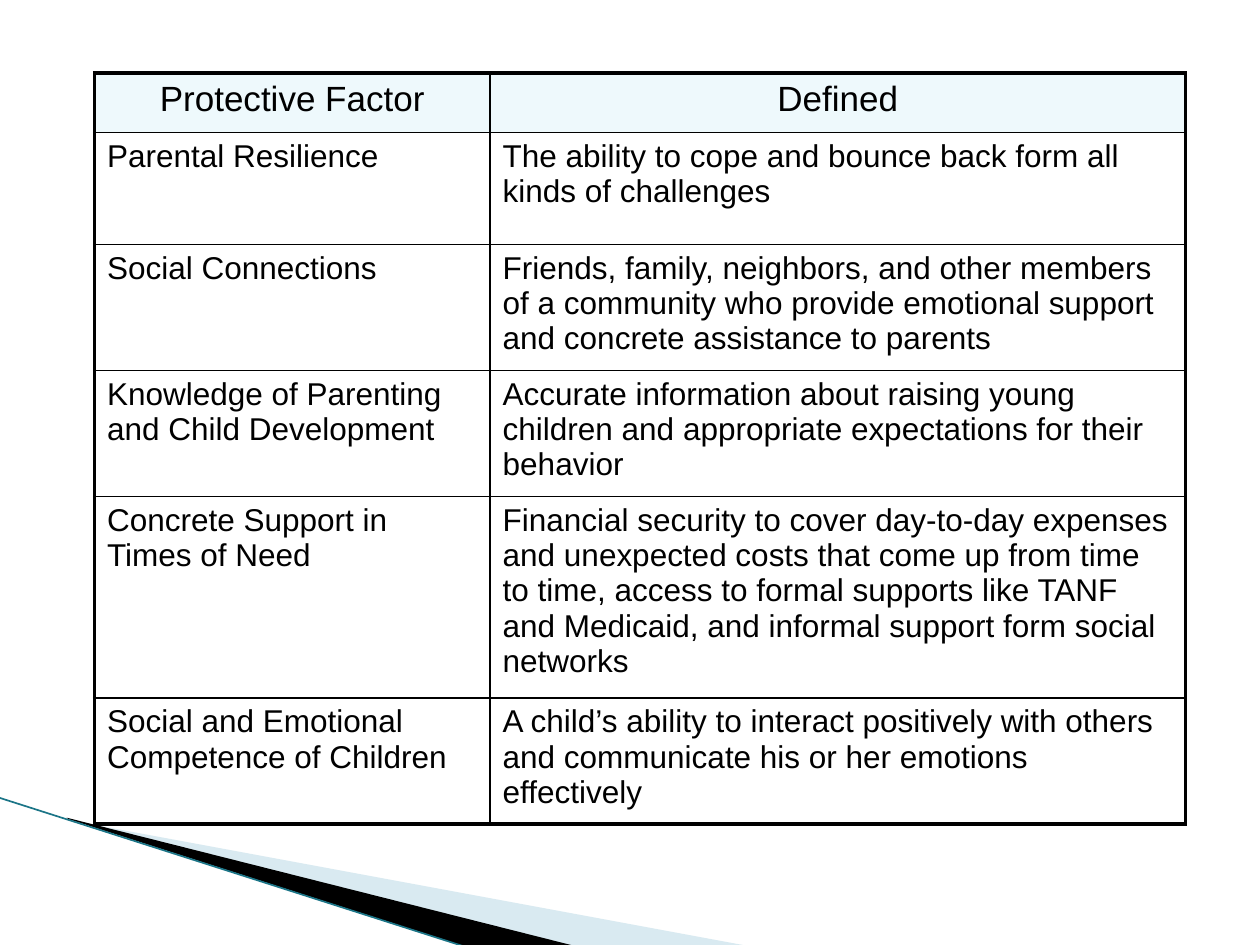
from lxml.etree import SubElement
from pptx import Presentation
from pptx.dml.color import RGBColor
from pptx.enum.shapes import MSO_CONNECTOR as Connector
from pptx.enum.text import PP_ALIGN as Align
from pptx.oxml.ns import qn
from pptx.util import Inches, Pt

COLORS = {
    "ink": "000000",
    "header": "DEF5FA",
    "pale_wedge": "A0CBDC",
    "edge": "1B7587",
}
FONT = "Arial"
THIN, THICK = 1, 2.25

COLUMN_WIDTHS = [3.14, 5.52]
ROW_HEIGHTS = [0.47, 0.89, 1, 1, 1.6, 1]
ROWS = [
    ("Protective Factor", "Defined"),
    ("Parental Resilience",
     "The ability to cope and bounce back form all kinds of challenges"),
    ("Social Connections",
     "Friends, family, neighbors, and other members of a community who "
     "provide emotional support and concrete assistance to parents"),
    ("Knowledge of Parenting and Child Development",
     "Accurate information about raising young children and appropriate "
     "expectations for their behavior"),
    ("Concrete Support in Times of Need",
     "Financial security to cover day-to-day expenses and unexpected costs "
     "that come up from time to time, access to formal supports like TANF "
     "and Medicaid, and informal support form social networks"),
    ("Social and Emotional Competence of Children",
     "A child’s ability to interact positively with others and communicate "
     "his or her emotions effectively"),
]


def set_fill(fill, color, opacity=100):
    fill.solid()
    fill.fore_color.rgb = RGBColor.from_string(COLORS[color])
    if opacity < 100:
        for element in fill._xPr.iter(qn("a:srgbClr")):
            SubElement(element, qn("a:alpha"), val=str(opacity * 1000))


def add_wedge(slide, points, color, opacity=100):
    corners = [(Inches(x), Inches(y)) for x, y in points]
    builder = slide.shapes.build_freeform(*corners[0])
    builder.add_line_segments(corners[1:], close=True)
    shape = builder.convert_to_shape()
    shape.shadow.inherit = False
    shape.line.fill.background()
    set_fill(shape.fill, color, opacity)


def add_edge(slide, start, end):
    ends = [Inches(value) for value in (*start, *end)]
    connector = slide.shapes.add_connector(Connector.STRAIGHT, *ends)
    connector.line.color.rgb = RGBColor.from_string(COLORS["edge"])
    connector.line.width = Pt(0.95)
    SubElement(connector._element.spPr, qn("a:effectLst"))


def set_borders(cell, widths):
    properties = cell._tc.get_or_add_tcPr()
    for side, width in zip("LRTB", widths):
        line = SubElement(properties, qn(f"a:ln{side}"), w=str(Pt(width)))
        solid = SubElement(line, qn("a:solidFill"))
        SubElement(solid, qn("a:srgbClr"), val=COLORS["ink"])


def format_cell(cell, text, is_header):
    cell.text = text
    paragraph = cell.text_frame.paragraphs[0]
    paragraph.alignment = Align.CENTER if is_header else Align.LEFT
    paragraph.font.name = FONT
    paragraph.font.size = Pt(20 if is_header else 18)
    paragraph.font.bold = False
    paragraph.font.color.rgb = RGBColor.from_string(COLORS["ink"])
    if is_header:
        set_fill(cell.fill, "header", 50)
    else:
        cell.fill.background()


def add_factor_table(slide):
    last_row, last_column = len(ROWS) - 1, len(COLUMN_WIDTHS) - 1
    frame = slide.shapes.add_table(
        len(ROWS), len(COLUMN_WIDTHS), Inches(0.75), Inches(0.58),
        Inches(sum(COLUMN_WIDTHS)), Inches(sum(ROW_HEIGHTS)))
    table = frame.table
    table.horz_banding = False
    table.first_row = False
    for column, width in zip(table.columns, COLUMN_WIDTHS):
        column.width = Inches(width)
    for row, height in zip(table.rows, ROW_HEIGHTS):
        row.height = Inches(height)
    for r, texts in enumerate(ROWS):
        for c, text in enumerate(texts):
            cell = table.cell(r, c)
            # Outer sides (left, right, top, bottom) are thick
            outer = (c == 0, c == last_column, r == 0, r == last_row)
            set_borders(cell, [THICK if side else THIN for side in outer])
            format_cell(cell, text, is_header=r == 0)


def main():
    presentation = Presentation()
    presentation.slide_width = Inches(10)
    presentation.slide_height = Inches(7.5)
    slide = presentation.slides.add_slide(presentation.slide_layouts[6])

    # Corner decoration
    add_wedge(slide, [(0.55, 6.51), (5.95, 7.51), (4.56, 7.51), (0.55, 6.5)],
              "pale_wedge", 40)
    add_wedge(slide, [(0.53, 6.49), (4.57, 7.51), (3.72, 7.52), (0.54, 6.5)],
              "ink")
    add_edge(slide, (-0.01, 6.33), (3.71, 7.52))

    # Protective factors and their definitions
    add_factor_table(slide)

    presentation.save("out.pptx")


if __name__ == "__main__":
    main()
